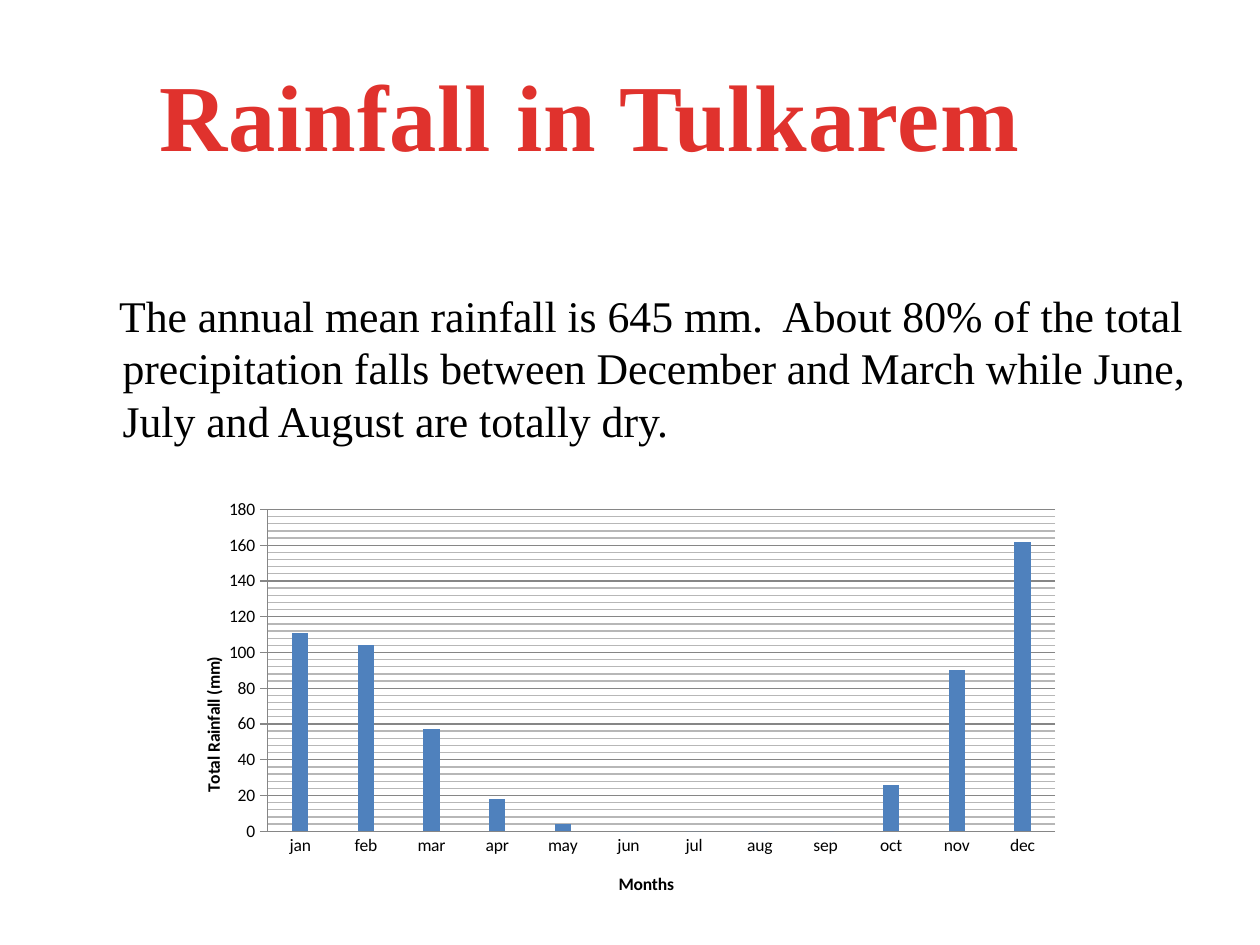
from copy import deepcopy
from dataclasses import dataclass
from lxml.etree import SubElement
from pptx import Presentation
from pptx.chart.data import CategoryChartData
from pptx.dml.color import RGBColor as RGB
from pptx.enum.chart import XL_CHART_TYPE as ChartType, XL_TICK_MARK as Tick
from pptx.enum.text import MSO_ANCHOR as Anchor, PP_ALIGN as Align
from pptx.oxml import parse_xml
from pptx.oxml.ns import nsdecls, qn
from pptx.util import Pt

TITLE = "Rainfall in Tulkarem"
SUMMARY = ("The annual mean rainfall is 645 mm.  About 80% of the total "
           "precipitation falls between December and March while "
           "June, July and August are totally dry.")
RAINFALL = {"jan": 111, "feb": 104, "mar": 57, "apr": 18, "may": 4, "jun": 0,
            "jul": 0, "aug": 0, "sep": 0, "oct": 26, "nov": 90, "dec": 162}
MONTH_TITLE = "Months"
RAIN_TITLE = "Total Rainfall (mm)"

SLIDE_SIZE = (720, 540)
TITLE_BOX = (78.5, 28, 546, 73)
SUMMARY_BOX = (36, 126, 648, 356)
CHART_BOX = (90, 281.5, 523.5, 242)
PLOT_AREA = {"x": 0.12, "y": 0.04, "w": 0.86, "h": 0.76}
MONTH_TITLE_AT = {"x": 0.5, "y": 0.89}
RAIN_TITLE_AT = {"x": 0.045, "y": 0.38}


@dataclass(frozen=True)
class Theme:
    serif: str = "Times New Roman"
    sans: str = "Calibri"
    title_size: float = 54
    summary_size: float = 25
    chart_size: float = 10
    red: RGB = RGB(0xE0, 0x32, 0x2D)
    black: RGB = RGB(0, 0, 0)
    bar: RGB = RGB(0x4F, 0x81, 0xBD)
    axis: RGB = RGB(0x86, 0x86, 0x86)
    minor: RGB = RGB(0xB7, 0xB7, 0xB7)


THEME = Theme()


def style(font, name, size, color, bold=False):
    font.name, font.size, font.bold = name, Pt(size), bold
    font.color.rgb = color


def set_insets(frame, left, top, right, bottom):
    frame.margin_left, frame.margin_top = Pt(left), Pt(top)
    frame.margin_right, frame.margin_bottom = Pt(right), Pt(bottom)


def manual_layout(place, inner=False):
    layout = parse_xml(f"<c:layout {nsdecls('c')}><c:manualLayout/></c:layout>")
    manual = layout[0]
    if inner:
        SubElement(manual, qn("c:layoutTarget")).set("val", "inner")
    for key in ("x", "y"):
        SubElement(manual, qn(f"c:{key}Mode")).set("val", "edge")
    for key, share in place.items():
        SubElement(manual, qn(f"c:{key}")).set("val", str(share))
    return layout


def replace_layout(parent, layout, after=None):
    for old in parent.findall(qn("c:layout")):
        parent.remove(old)
    if after is None:
        parent.insert(0, layout)
    else:
        parent.find(qn(after)).addnext(layout)


def add_title(slide):
    title = slide.shapes.title
    title.left, title.top, title.width, title.height = map(Pt, TITLE_BOX)
    frame = title.text_frame
    frame.word_wrap = True
    frame.vertical_anchor = Anchor.BOTTOM
    set_insets(frame, 7.2, 3.6, 35.6, 3.6)
    heading = frame.paragraphs[0]
    heading.alignment = Align.CENTER
    run = heading.add_run()
    run.text = TITLE
    style(run.font, THEME.serif, THEME.title_size, THEME.red, bold=True)
    run.font._element.set("spc", "50")


def add_summary(slide):
    frame = slide.shapes.add_textbox(*map(Pt, SUMMARY_BOX)).text_frame
    frame.word_wrap = True
    set_insets(frame, 7.2, 39, 4, 3.6)
    summary = frame.paragraphs[0]
    summary.line_spacing = Pt(30)
    indents = summary._p.get_or_add_pPr()
    indents.set("marL", str(Pt(27)))
    indents.set("indent", str(Pt(-2)))
    run = summary.add_run()
    run.text = SUMMARY
    style(run.font, THEME.serif, THEME.summary_size, THEME.black)


def format_axis(axis, title, title_at, tick):
    axis.major_tick_mark, axis.minor_tick_mark = tick, Tick.NONE
    axis.format.line.color.rgb = THEME.axis
    axis.format.line.width = Pt(0.75)
    run = axis.axis_title.text_frame.paragraphs[0].add_run()
    run.text = title
    style(run.font, THEME.sans, THEME.chart_size, THEME.black, bold=True)
    replace_layout(axis.axis_title._element, manual_layout(title_at), "c:tx")


def add_gridlines(axis):
    axis.has_major_gridlines = axis.has_minor_gridlines = True
    major_line = axis.major_gridlines.format.line
    major_line.color.rgb = THEME.axis
    major_line.width = Pt(0.75)
    major = axis._element.find(qn("c:majorGridlines"))
    minor = axis._element.find(qn("c:minorGridlines"))
    minor.append(deepcopy(major.find(qn("c:spPr"))))
    for color in minor.iter(qn("a:srgbClr")):
        color.set("val", str(THEME.minor))


def add_rainfall_chart(slide):
    rainfall = CategoryChartData()
    rainfall.categories = list(RAINFALL)
    rainfall.add_series("Series 1", list(RAINFALL.values()))
    chart = slide.shapes.add_chart(
        ChartType.COLUMN_CLUSTERED, *map(Pt, CHART_BOX), rainfall).chart
    chart.has_legend = chart.has_title = False
    style(chart.font, THEME.sans, THEME.chart_size, THEME.black)

    columns = chart.plots[0]
    columns.gap_width, columns.vary_by_categories = 300, False
    bars = columns.series[0].format.fill
    bars.solid()
    bars.fore_color.rgb = THEME.bar

    months, rain = chart.category_axis, chart.value_axis
    format_axis(months, MONTH_TITLE, MONTH_TITLE_AT, Tick.NONE)
    format_axis(rain, RAIN_TITLE, RAIN_TITLE_AT, Tick.CROSS)
    rain.minimum_scale, rain.maximum_scale = 0, 180
    rain.major_unit, rain.minor_unit = 20, 4
    add_gridlines(rain)
    replace_layout(chart._chartSpace.chart.plotArea,
                   manual_layout(PLOT_AREA, inner=True))


def main():
    deck = Presentation()
    deck.slide_width, deck.slide_height = map(Pt, SLIDE_SIZE)
    slide = deck.slides.add_slide(deck.slide_layouts.get_by_name("Title Only"))
    add_summary(slide)
    add_title(slide)
    add_rainfall_chart(slide)
    deck.save("out.pptx")


if __name__ == "__main__":
    main()
